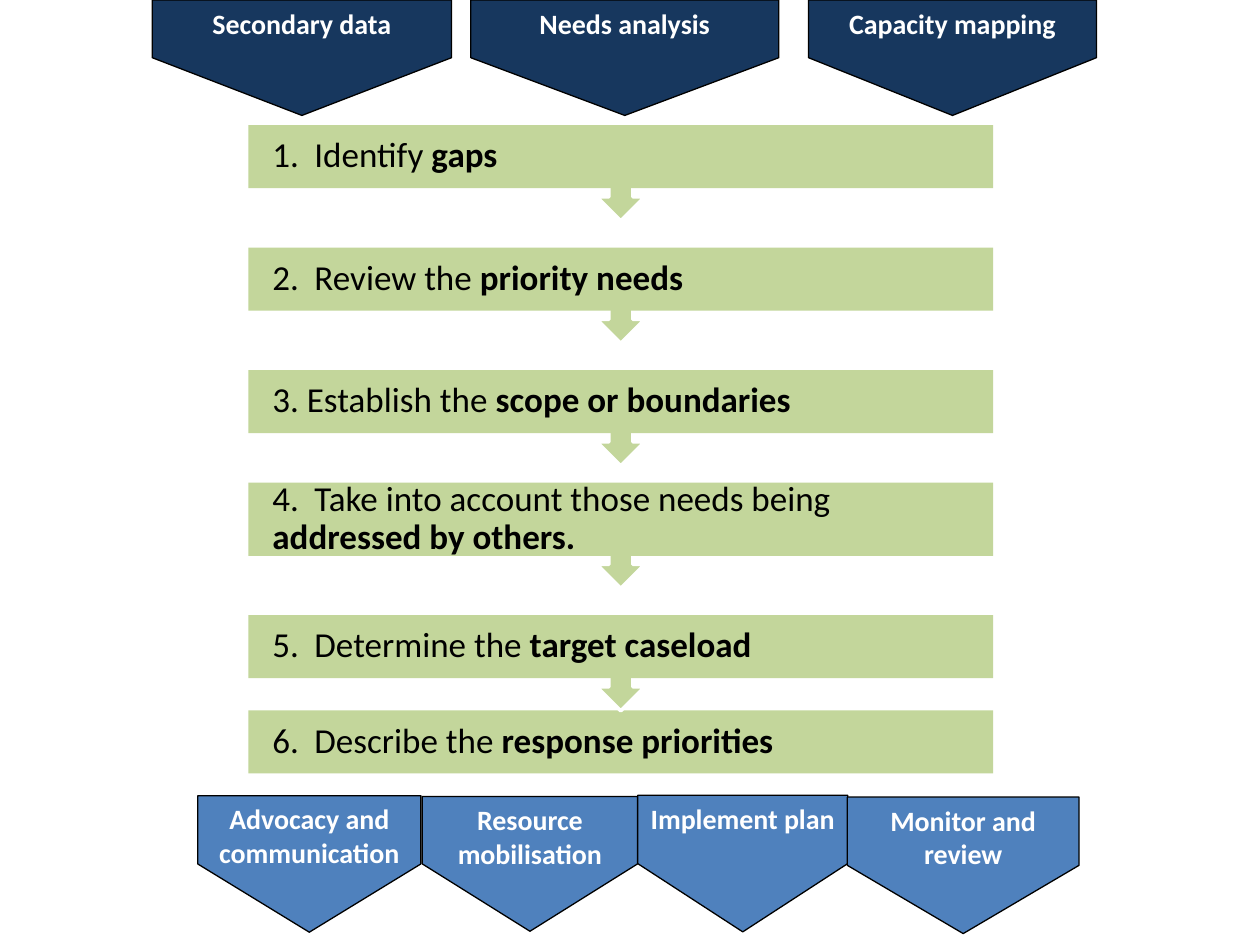
from dataclasses import dataclass

import pptx
from lxml import etree
from pptx.dml.color import RGBColor
from pptx.enum.shapes import MSO_SHAPE
from pptx.enum.text import MSO_ANCHOR, PP_ALIGN
from pptx.oxml.ns import qn
from pptx.util import Pt


@dataclass(frozen=True)
class Theme:
    font: str = "Calibri"
    step: str = "C3D69B"
    source: str = "17375E"
    outcome: str = "4F81BD"
    black: str = "000000"
    white: str = "FFFFFF"
    step_size: float = 20
    banner_size: float = 16


THEME = Theme()

STEP_LEFT, STEP_WIDTH, STEP_HEIGHT = 142, 425.5, 36
STEP_TOP, STEP_PITCH, CALLOUT_HEIGHT = 71.5, 70, 54.7
LAST_STEP_TOP = 406
STEP_INSET, NUMBER_TAB = 13.7, 24

STEPS = [
    ("1.\tIdentify ", "gaps"),
    ("2.\tReview the ", "priority needs"),
    ("3. Establish the ", "scope or boundaries"),
    ("4.\tTake into account those needs being ", "addressed by others."),
    ("5.\tDetermine the ", "target caseload"),
    ("6.\tDescribe the ", "response priorities"),
]
# A step with two lines of text has a taller label: index -> (top, height)
TALL_LABELS = {3: (275.8, 41.8)}

# Text, left, top, width, height
SOURCES = [
    ("Secondary data", 87, 0, 171, 66),
    ("Needs analysis", 269, 0, 176, 66),
    ("Capacity mapping", 462, 0, 164.5, 66),
]
OUTCOMES = [
    ("Advocacy and communication", 113, 454.7, 127.5, 78),
    ("Resource mobilisation", 241.3, 455.2, 123, 77),
    ("Implement plan", 364.4, 454.5, 120, 78),
    ("Monitor and review", 484.2, 455.5, 132.4, 78),
]


def set_attributes(obj, values):
    for name, value in values.items():
        setattr(obj, name, value)


def add_run(p, text, size, color, bold=False):
    r = p.add_run()
    r.text = text
    set_attributes(r.font, {"name": THEME.font, "size": Pt(size), "bold": bold})
    r.font.color.rgb = RGBColor.from_string(color)


def add_box(shapes, kind, box, fill, line=None, line_width=0.75):
    sp = shapes.add_shape(kind, *(Pt(v) for v in box))
    sp.shadow.inherit = False
    sp.fill.solid()
    sp.fill.fore_color.rgb = RGBColor.from_string(fill)
    if line:
        sp.line.color.rgb = RGBColor.from_string(line)
        sp.line.width = Pt(line_width)
    else:
        sp.line.fill.background()
    return sp


def add_number_tab(p):
    tabs = etree.SubElement(p._p.get_or_add_pPr(), qn("a:tabLst"))
    etree.SubElement(tabs, qn("a:tab"), pos=str(Pt(NUMBER_TAB)), algn="l")


def add_step(s, index, plain, strong):
    """Add a label over a callout whose arrow leads to the next step."""
    shapes = s.shapes.add_group_shape().shapes
    is_last = index == len(STEPS) - 1
    top = LAST_STEP_TOP if is_last else STEP_TOP + index * STEP_PITCH
    kind = MSO_SHAPE.RECTANGLE if is_last else MSO_SHAPE.UP_ARROW_CALLOUT
    height = STEP_HEIGHT if is_last else CALLOUT_HEIGHT
    back = add_box(shapes, kind, (STEP_LEFT, top, STEP_WIDTH, height),
                   THEME.step, THEME.white, 2)
    back.rotation = 0 if is_last else 180

    label_top, label_height = TALL_LABELS.get(index, (top, STEP_HEIGHT))
    label = add_box(shapes, MSO_SHAPE.RECTANGLE,
                    (STEP_LEFT, label_top, STEP_WIDTH, label_height), THEME.step)
    tf = label.text_frame
    set_attributes(tf, {"word_wrap": True, "vertical_anchor": MSO_ANCHOR.MIDDLE})
    for side in ("left", "top", "right", "bottom"):
        setattr(tf, f"margin_{side}", Pt(STEP_INSET))
    p = tf.paragraphs[0]
    add_number_tab(p)
    set_attributes(p, {"alignment": PP_ALIGN.LEFT, "line_spacing": 0.9})
    add_run(p, plain, THEME.step_size, THEME.black)
    add_run(p, strong, THEME.step_size, THEME.black, bold=True)


def add_banner(s, text, left, top, width, height, fill):
    """Add a pentagon pointing down, with upright text, at its visible bounds."""
    box = (left + (width - height) / 2, top + (height - width) / 2, height, width)
    sp = add_box(s.shapes, MSO_SHAPE.PENTAGON, box, fill, THEME.black)
    sp.rotation = 90
    tf = sp.text_frame
    set_attributes(tf, {"word_wrap": True, "vertical_anchor": MSO_ANCHOR.TOP})
    tf._txBody.bodyPr.set("vert", "vert270")
    p = tf.paragraphs[0]
    p.alignment = PP_ALIGN.CENTER
    add_run(p, text, THEME.banner_size, THEME.white, bold=True)


def main():
    prs = pptx.Presentation()
    set_attributes(prs, {"slide_width": Pt(720), "slide_height": Pt(540)})
    s = prs.slides.add_slide(prs.slide_layouts[6])
    for index in reversed(range(len(STEPS))):
        add_step(s, index, *STEPS[index])
    for banners, fill in ((OUTCOMES, THEME.outcome), (SOURCES, THEME.source)):
        for banner in banners:
            add_banner(s, *banner, fill)
    prs.save("out.pptx")


if __name__ == "__main__":
    main()
